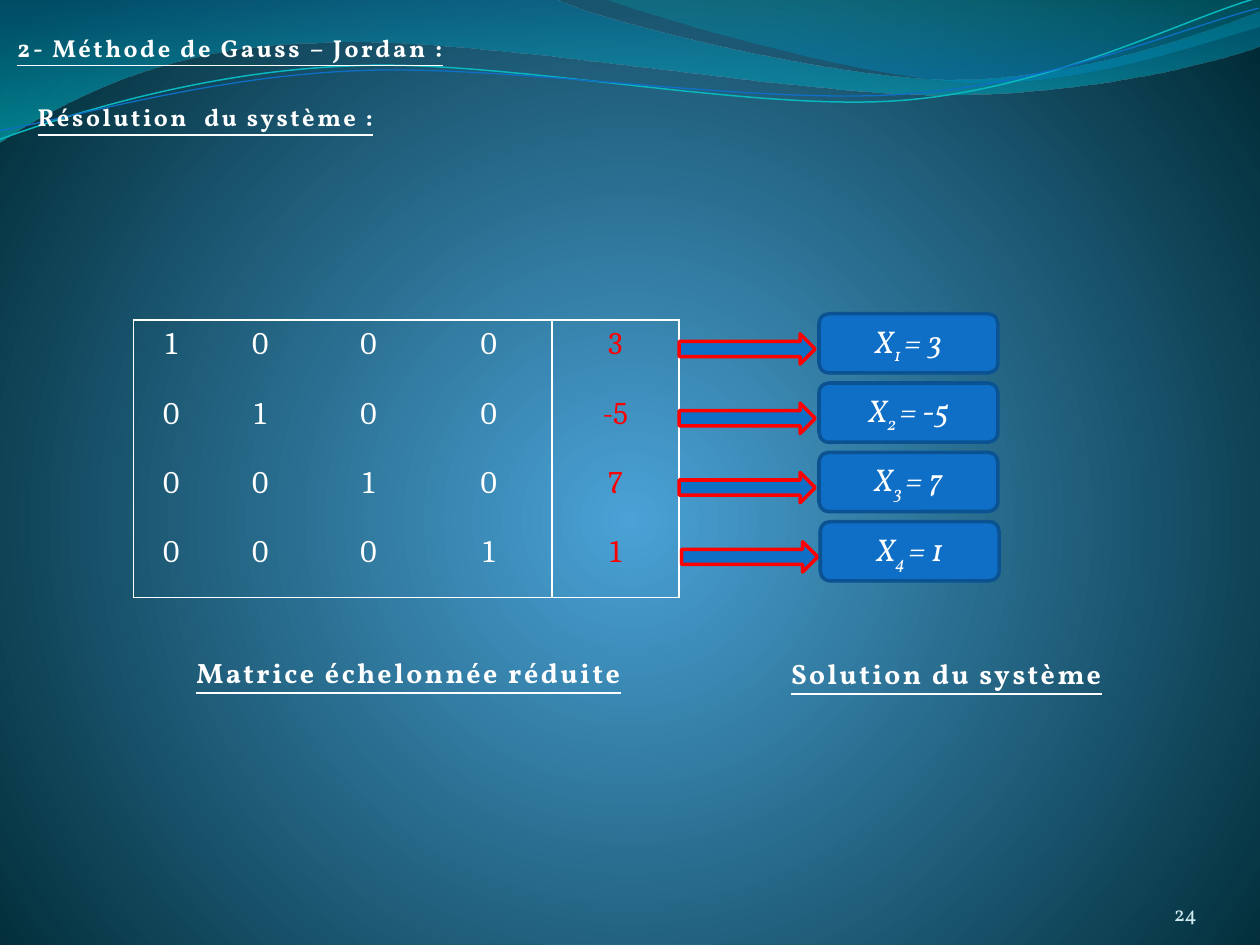
from dataclasses import dataclass
from typing import Any

from lxml.etree import SubElement
from pptx import Presentation
from pptx.dml.color import RGBColor
from pptx.enum.shapes import MSO_SHAPE
from pptx.enum.text import MSO_ANCHOR, MSO_AUTO_SIZE, PP_ALIGN
from pptx.oxml.ns import qn
from pptx.util import Pt

PX = 9144  # EMU in one px, 100 px to the inch
WHITE, RED, BLUE, NAVY = "FFFFFF", "FF0000", "0F6FC6", "0B5292"
BODY_FONT, MATRIX_FONT = "Vollkorn", "Cambria"
ROW_HEIGHT = 55


@dataclass
class Wave:
    """Path of (x, y) line ends and (x1, y1, x2, y2, x, y) curve segments."""
    start: tuple[int, int]
    segments: list[tuple[int, ...]]
    stops: tuple = ()
    angle: int = 0
    line: str = ""
    width: float = 0
    rotation: float = 0


@dataclass
class Label:
    text: str
    left: int
    top: int
    width: int
    height: int
    size: int


@dataclass
class Solution:
    index: int
    value: int
    shift: int = 0


WAVES = [
    Wave((0, 0), [(440, -1), (476, 17, 664, 63, 758, 63), (853, 63, 958, 26, 1000, 9),
                  (1001, 36), (983, 44, 870, 76, 746, 75), (622, 75, 382, 28, 257, 34),
                  (129, 35, 46, 83, -1, 113), (0, 0)],
         stops=((0, "0074A0", 45), (100, "00C4CD", 55)), angle=90),
    Wave((479, -1), [(509, 11, 682, 62, 769, 65), (856, 69, 961, 32, 1000, 21),
                     (1000, 0), (479, -1)],
         stops=((20, "008ABF", 45), (100, "00A0A8", 30)), angle=270),
    Wave((-2, 87), [(47, 72, 158, 41, 277, 42), (396, 41, 591, 93, 712, 90),
                    (832, 87, 940, 36, 1000, 22)], line="09B7BF", width=0.85, rotation=357.3),
    Wave((-2, 80), [(46, 75, 164, 45, 283, 46), (403, 46, 596, 88, 716, 85),
                    (835, 83, 942, 42, 1001, 30)], line=BLUE, width=0.75, rotation=357.3),
]
LABELS = [
    Label("2- Méthode de Gauss – Jordan :", 4, 21, 368, 33, 14),
    Label("Résolution  du système :", 20, 76, 401, 33, 14),
    Label("Matrice échelonnée réduite", 146, 515, 372, 37, 16),
    Label("Solution du système", 618, 516, 289, 37, 16),
]
SOLUTIONS = [Solution(1, 3), Solution(2, -5), Solution(3, 7), Solution(4, 1, shift=1)]
COLUMN_WIDTHS = [60, 81, 91, 100, 101]


def rgb(color: str) -> RGBColor:
    return RGBColor.from_string(color)


def box(*lengths: int) -> list[int]:
    return [length * PX for length in lengths]


def set_gradient(fill, owner, stops, angle: int | None = None) -> None:
    """Linear gradient at an angle, or a circle around (50 %, 55 %) without one."""
    fill.gradient()
    gradient = next(owner.iter(qn("a:gradFill")))
    for child in list(gradient):
        gradient.remove(child)
    stop_list = SubElement(gradient, qn("a:gsLst"))
    for position, color, opacity in stops:
        stop = SubElement(stop_list, qn("a:gs"), pos=str(position * 1000))
        tone = SubElement(stop, qn("a:srgbClr"), val=color)
        if opacity < 100:
            SubElement(tone, qn("a:alpha"), val=str(opacity * 1000))
    if angle is None:
        circle = SubElement(gradient, qn("a:path"), path="circle")
        SubElement(circle, qn("a:fillToRect"), l="50000", t="55000", r="50000", b="45000")
    else:
        SubElement(gradient, qn("a:lin"), ang=str(angle * 60000), scaled="0")


def bend_curves(shape, segments: list[tuple[int, ...]]) -> None:
    """Join the three line ends of each curve segment into one cubic curve."""
    outline = next(shape._element.iter(qn("a:path")))
    lines = iter(outline.findall(qn("a:lnTo")))
    for segment in segments:
        first = next(lines)
        if len(segment) == 2:
            continue
        curve = SubElement(outline, qn("a:cubicBezTo"))
        first.addprevious(curve)
        for line in (first, next(lines), next(lines)):
            curve.append(line[0])
            outline.remove(line)


def draw_wave(slide, wave: Wave) -> None:
    points = [box(*segment[i:i + 2]) for segment in wave.segments
              for i in range(0, len(segment), 2)]
    builder = slide.shapes.build_freeform(*box(*wave.start))
    builder.add_line_segments(points, close=bool(wave.stops))
    shape = builder.convert_to_shape()
    bend_curves(shape, wave.segments)
    shape.rotation = wave.rotation
    shape.shadow.inherit = False
    if wave.stops:
        set_gradient(shape.fill, shape._element, wave.stops, wave.angle)
        shape.line.fill.background()
    else:
        shape.fill.background()
        shape.line.color.rgb = rgb(wave.line)
        shape.line.width = Pt(wave.width)


def add_run(paragraph, text: str, size: int, color: str = WHITE,
            name: str = BODY_FONT, **formats: Any):
    run = paragraph.add_run()
    run.text = text
    for attribute, value in {"size": Pt(size), "name": name, **formats}.items():
        setattr(run.font, attribute, value)
    run.font.color.rgb = rgb(color)
    return run


def draw_label(slide, label: Label) -> None:
    frame = slide.shapes.add_textbox(
        *box(label.left, label.top, label.width, label.height)).text_frame
    frame.word_wrap = True
    frame.auto_size = MSO_AUTO_SIZE.SHAPE_TO_FIT_TEXT
    run = add_run(frame.paragraphs[0], label.text, label.size, bold=True, underline=True)
    run.font._element.set("spc", "150")


def draw_slide_number(slide, number: str) -> None:
    frame = slide.shapes.add_textbox(*box(867, 695, 83, 40)).text_frame
    formats = {"word_wrap": True, "vertical_anchor": MSO_ANCHOR.BOTTOM, "margin_left": 0,
               "margin_right": 0, "margin_top": 0, "margin_bottom": 0}
    for attribute, value in formats.items():
        setattr(frame, attribute, value)
    frame.paragraphs[0].alignment = PP_ALIGN.RIGHT
    add_run(frame.paragraphs[0], number, 12, "D1EAED")


def set_borders(cell, visible: dict[str, bool]) -> None:
    properties = cell._tc.get_or_add_tcPr()
    for position, (side, shown) in enumerate(visible.items()):
        line = SubElement(properties, qn(f"a:{side}"), w=str(Pt(0.96)))
        if shown:
            SubElement(SubElement(line, qn("a:solidFill")), qn("a:srgbClr"), val=WHITE)
        else:
            SubElement(line, qn("a:noFill"))
        properties.insert(position, line)


def draw_matrix(slide) -> None:
    """Identity matrix with the solution values as its last column."""
    count = len(SOLUTIONS)
    table = slide.shapes.add_table(count, count + 1, *box(
        106, 254, sum(COLUMN_WIDTHS), count * ROW_HEIGHT)).table
    table.first_row = table.horz_banding = False
    for column, width in zip(table.columns, COLUMN_WIDTHS):
        column.width = width * PX
    for row, solution in enumerate(SOLUTIONS):
        table.rows[row].height = ROW_HEIGHT * PX
        values = [int(row == column) for column in range(count)] + [solution.value]
        for column, value in enumerate(values):
            cell = table.cell(row, column)
            cell.fill.background()
            paragraph = cell.text_frame.paragraphs[0]
            paragraph.alignment = PP_ALIGN.CENTER
            add_run(paragraph, str(value), 18, RED if column == count else WHITE, MATRIX_FONT)
            set_borders(cell, {"lnL": column in (0, count), "lnR": column >= count - 1,
                               "lnT": row == 0, "lnB": row == count - 1})


def add_preset(slide, preset: MSO_SHAPE, bounds: list[int], line: str):
    shape = slide.shapes.add_shape(preset, *bounds)
    shape.shadow.inherit = False
    shape.fill.solid()
    shape.fill.fore_color.rgb = rgb(BLUE)
    shape.line.color.rgb = rgb(line)
    shape.line.width = Pt(2)
    return shape


def draw_solution(slide, solution: Solution) -> None:
    offset = (solution.index - 1) * ROW_HEIGHT
    add_preset(slide, MSO_SHAPE.RIGHT_ARROW,
               box(539 + 2 * solution.shift, 265 + offset, 108, 24), RED)
    card = add_preset(slide, MSO_SHAPE.ROUNDED_RECTANGLE,
                      box(650 + solution.shift, 249 + offset, 142, 47), NAVY)
    card.text_frame.vertical_anchor = MSO_ANCHOR.MIDDLE
    paragraph = card.text_frame.paragraphs[0]
    paragraph.alignment = PP_ALIGN.CENTER
    add_run(paragraph, "X", 18, italic=True)
    subscript = add_run(paragraph, f"{solution.index} ", 18, italic=True)
    subscript.font._element.set("baseline", "-25000")
    add_run(paragraph, f"= {solution.value}", 18, italic=True)


presentation = Presentation()
presentation.slide_width, presentation.slide_height = box(1000, 750)
slide = presentation.slides.add_slide(presentation.slide_layouts[6])
set_gradient(slide.background.fill, slide._element,
             ((0, "4AA2D6", 100), (100, "002B36", 100)))
for wave in WAVES:
    draw_wave(slide, wave)
for label in LABELS:
    draw_label(slide, label)
draw_slide_number(slide, "24")
draw_matrix(slide)
for solution in SOLUTIONS:
    draw_solution(slide, solution)
presentation.save("out.pptx")
